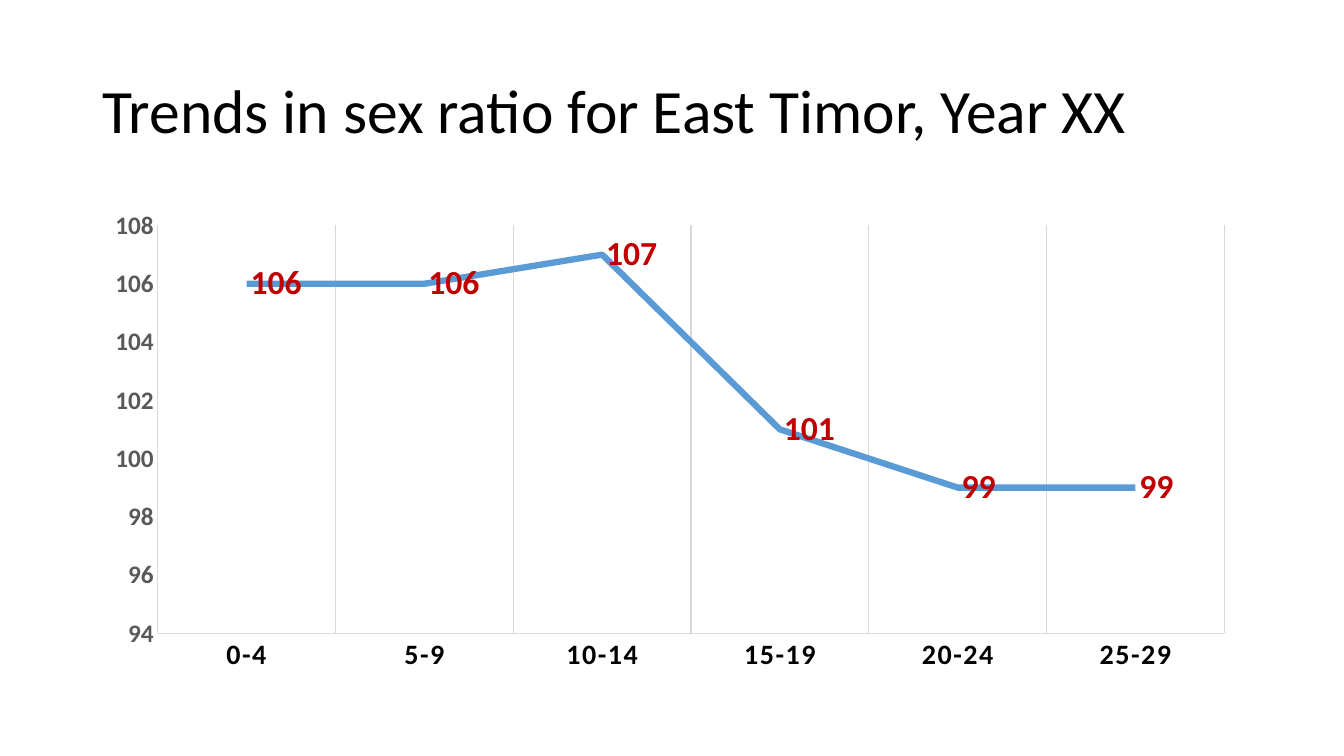
import pptx
import pptx.chart.data
import pptx.dml.color
import pptx.enum.chart
import pptx.enum.text
import pptx.oxml
import pptx.oxml.ns
import pptx.util
from pptx.util import Inches

BLACK = pptx.dml.color.RGBColor(0x00, 0x00, 0x00)
GREY = pptx.dml.color.RGBColor(0x59, 0x59, 0x59)
LIGHT_GREY = pptx.dml.color.RGBColor(0xD9, 0xD9, 0xD9)
BLUE = pptx.dml.color.RGBColor(0x5B, 0x9B, 0xD5)
RED = pptx.dml.color.RGBColor(0xC0, 0x00, 0x00)

FONT_NAME = "Calibri"
LEFT, WIDTH = Inches(0.92), Inches(11.5)
SEX_RATIOS = {
    "0-4": 106,
    "5-9": 106,
    "10-14": 107,
    "15-19": 101,
    "20-24": 99,
    "25-29": 99,
}


def style_font(font, size, color, bold=False):
    font.name = FONT_NAME
    font.size = pptx.util.Pt(size)
    font.bold = bold
    font.color.rgb = color


def style_line(line, color, width):
    line.color.rgb = color
    line.width = pptx.util.Pt(width)


def style_axis(axis, size, color):
    axis.major_tick_mark = pptx.enum.chart.XL_TICK_MARK.NONE
    axis.minor_tick_mark = pptx.enum.chart.XL_TICK_MARK.NONE
    style_line(axis.format.line, LIGHT_GREY, 0.75)
    style_font(axis.tick_labels.font, size, color, bold=True)


def set_plot_area(chart, x, y, width, height):
    """Fix the inner plot area, in fractions of the chart's size."""
    plot_area = chart.element.xpath("c:chart/c:plotArea")[0]
    for layout in plot_area.xpath("c:layout"):
        plot_area.remove(layout)
    places = {"x": x, "y": y, "w": width, "h": height}
    modes = "".join(f'<c:{name}Mode val="edge"/>' for name in ("x", "y"))
    values = "".join(f'<c:{name} val="{value}"/>' for name, value in places.items())
    plot_area.insert(0, pptx.oxml.parse_xml(
        f'<c:layout {pptx.oxml.ns.nsdecls("c")}><c:manualLayout>'
        f'<c:layoutTarget val="inner"/>{modes}{values}'
        "</c:manualLayout></c:layout>"
    ))


def add_title(slide, text):
    box = slide.shapes.add_textbox(LEFT, Inches(0.4), WIDTH, Inches(1.45))
    frame = box.text_frame
    frame.word_wrap = True
    frame.vertical_anchor = pptx.enum.text.MSO_ANCHOR.MIDDLE
    paragraph = frame.paragraphs[0]
    paragraph.line_spacing = 0.9
    run = paragraph.add_run()
    run.text = text
    style_font(run.font, 44, BLACK)


def add_ratio_chart(slide):
    data = pptx.chart.data.CategoryChartData()
    data.categories = list(SEX_RATIOS)
    data.add_series("Series 1", list(SEX_RATIOS.values()))
    chart = slide.shapes.add_chart(
        pptx.enum.chart.XL_CHART_TYPE.LINE, LEFT, Inches(2), WIDTH, Inches(4.76), data
    ).chart
    chart.has_title = False
    chart.has_legend = False
    style_font(chart.font, 10, BLACK)
    set_plot_area(chart, 0.056, 0.05, 0.92, 0.85)

    style_axis(chart.category_axis, 20, BLACK)
    chart.category_axis.has_major_gridlines = True
    style_line(chart.category_axis.major_gridlines.format.line, LIGHT_GREY, 0.75)
    for properties in chart.element.xpath(".//c:catAx/c:txPr//a:defRPr"):
        properties.set("spc", "100")

    style_axis(chart.value_axis, 18, GREY)
    chart.value_axis.has_major_gridlines = False
    chart.value_axis.minimum_scale = 94
    chart.value_axis.maximum_scale = 108
    chart.value_axis.major_unit = 2

    plot = chart.plots[0]
    plot.vary_by_categories = False
    series = plot.series[0]
    series.smooth = False
    series.marker.style = pptx.enum.chart.XL_MARKER_STYLE.NONE
    style_line(series.format.line, BLUE, 4.5)
    labels = series.data_labels
    labels.show_value = True
    labels.position = pptx.enum.chart.XL_LABEL_POSITION.RIGHT
    style_font(labels.font, 24, RED, bold=True)


def main():
    presentation = pptx.Presentation()
    presentation.slide_width = Inches(13.33)
    presentation.slide_height = Inches(7.5)
    slide = presentation.slides.add_slide(presentation.slide_layouts[6])
    add_title(slide, "Trends in sex ratio for East Timor, Year XX")
    add_ratio_chart(slide)
    presentation.save("out.pptx")


if __name__ == "__main__":
    main()
